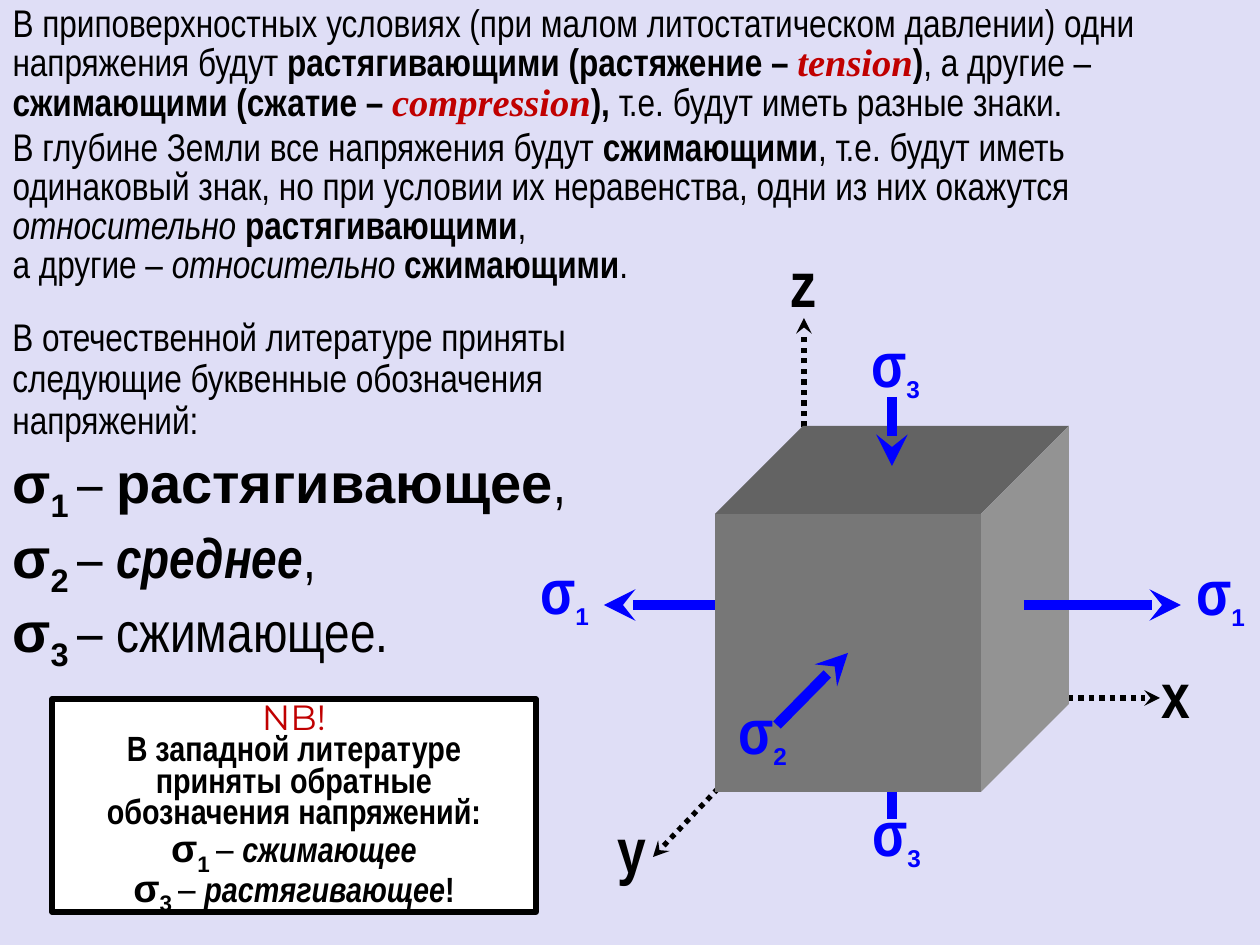
from lxml import etree
from pptx import Presentation
from pptx.dml.color import RGBColor
from pptx.enum.dml import MSO_LINE
from pptx.enum.shapes import MSO_CONNECTOR, MSO_SHAPE
from pptx.enum.text import MSO_ANCHOR, MSO_AUTO_SIZE, PP_ALIGN
from pptx.oxml.ns import qn
from pptx.util import Emu, Pt

LEFT, CENTER = PP_ALIGN.LEFT, PP_ALIGN.CENTER
DOTTED, STRAIGHT = MSO_LINE.ROUND_DOT, MSO_CONNECTOR.STRAIGHT
BLACK, WHITE = RGBColor(0, 0, 0), RGBColor(255, 255, 255)
RED, BLUE = RGBColor(0xC0, 0, 0), RGBColor(0, 0, 255)
LAVENDER = RGBColor(0xDF, 0xDE, 0xF6)
TOP_GREY, FRONT_GREY, SIDE_GREY = (RGBColor(v, v, v) for v in (0x63, 0x77, 0x93))
PX = 914400 / 126

# Run styles: font, bold, italic, colour, subscript
STYLES = {
    "plain": ("Arial Narrow", False, False, BLACK, False),
    "bold": ("Arial Narrow", True, False, BLACK, False),
    "italic": ("Arial Narrow", False, True, BLACK, False),
    "strong": ("Arial Narrow", True, True, BLACK, False),
    "term": ("Times New Roman", True, True, RED, False),
    "note": ("Montserrat", False, False, RED, False),
    "sigma": ("Arial", True, False, BLACK, False),
    "sub": ("Arial", True, False, BLACK, True),
    "axis": ("Arial Narrow", True, False, BLACK, False),
    "label": ("Arial Narrow", True, False, BLUE, False),
    "index": ("Arial", True, False, BLUE, True),
}


def stress(number, *runs):
    return [("σ", "sigma"), (f"{number} ", "sub"), ("– ", "plain"), *runs]


# Paragraphs: size, space before, runs (text, style, own size if it differs)
INTRO = [
    (22, 0, [
        ("В приповерхностных условиях (при малом литостатическом давлении) "
         "одни напряжения будут ", "plain"),
        ("растягивающими (растяжение – ", "bold"), ("tension", "term"),
        (")", "bold"), (", а другие – ", "plain"),
        ("сжимающими (сжатие – ", "bold"), ("compression", "term"),
        ("), ", "bold"), ("т.е. будут иметь разные знаки.", "plain")]),
    (22, 3.3, [
        ("В глубине Земли все напряжения будут ", "plain"),
        ("сжимающими", "bold"),
        (", т.е. будут иметь одинаковый знак, но при условии их неравенства, "
         "одни из них окажутся ", "plain"),
        ("относительно ", "italic"), ("растягивающими", "bold"), (",", "plain")]),
    (22, 0, [
        ("а другие – ", "plain"), ("относительно ", "italic"),
        ("сжимающими", "bold"), (".", "plain")]),
]
NOTATION = [
    (22, 0, [("В отечественной литературе приняты следующие буквенные "
              "обозначения напряжений:", "plain")]),
    (32, 3.2, stress(1, ("растягивающее", "sigma"), (",", "plain"))),
    (32, 3.2, stress(2, ("среднее", "strong"), (",", "plain"))),
    (32, 3.2, stress(3, ("сжимающее.", "plain"))),
]
WESTERN = [
    (20, 0, [("NB!", "note")]),
    (20, 0, [("В западной литературе приняты обратные обозначения "
              "напряжений:", "bold")]),
    (22, 0, stress(1, ("сжимающее", "strong", 20))),
    (22, 0, stress(3, ("растягивающее", "strong", 20), ("!", "bold", 20))),
]

# Arrows: start and end points
AXES = [((805, 697), (653, 857)), ((805, 698), (1160, 698)), ((804, 700), (804, 318))]
REAR_STRESSES = [((892, 819), (892, 745)), ((758, 605), (604, 605))]
FRONT_STRESSES = [((1024, 605), (1181, 605)), ((777, 725), (848, 653)),
                  ((892, 397), (892, 466))]

# Cube: front face and the shift to its rear face
CUBE_LEFT, CUBE_TOP, CUBE_RIGHT, CUBE_BOTTOM = 715, 514, 981, 792
DEPTH = 88

# Labels: left, top, width
AXIS_LABELS = [("x", 1149, 682, 54), ("z", 777, 271, 52), ("y", 605, 837, 54)]
STRESS_LABELS = [("1", 525, 577), ("1", 1181, 578), ("3", 856, 350),
                 ("3", 857, 819), ("2", 723, 717)]
LABEL_WIDTH, LABEL_HEIGHT = 79, 50


def emu(*lengths):
    return [Emu(round(v * PX)) for v in lengths]


def write(shape, paragraphs, spacing, align=LEFT, wrap=True):
    tf = shape.text_frame
    tf.word_wrap = wrap
    tf.auto_size = MSO_AUTO_SIZE.NONE
    tf.vertical_anchor = MSO_ANCHOR.TOP
    for n, (size, before, runs) in enumerate(paragraphs):
        p = tf.add_paragraph() if n else tf.paragraphs[0]
        pPr = p._p.get_or_add_pPr()
        pPr.set("marL", "0")
        pPr.set("indent", "0")
        etree.SubElement(pPr, qn("a:buNone"))
        p.alignment = align
        p.line_spacing = spacing
        p.space_before = Pt(before)
        p.space_after = Pt(0)
        for text, style, *own_size in runs:
            r = p.add_run()
            r.text = text
            font, bold, italic, color, subscript = STYLES[style]
            r.font.name, r.font.bold, r.font.italic = font, bold, italic
            r.font.size = Pt(own_size[0] if own_size else size)
            r.font.color.rgb = color
            if subscript:
                r._r.get_or_add_rPr().set("baseline", "-25000")


def add_arrow(start, end, color, width, dash=None):
    line = s.shapes.add_connector(STRAIGHT, *emu(*start, *end))
    line.line.color.rgb = color
    line.line.width = Pt(width)
    if dash:
        line.line.dash_style = dash
    etree.SubElement(line.line._get_or_add_ln(), qn("a:tailEnd"), type="stealth")
    etree.SubElement(line._element.spPr, qn("a:effectLst"))


def add_face(points, color):
    builder = s.shapes.build_freeform(*points[0], scale=PX)
    builder.add_line_segments(points[1:], close=True)
    face = builder.convert_to_shape()
    face.fill.solid()
    face.fill.fore_color.rgb = color
    face.line.fill.background()
    face.shadow.inherit = False


def add_label(x, y, width, runs):
    box = s.shapes.add_textbox(*emu(x, y, width, LABEL_HEIGHT))
    write(box, [(36, 0, runs)], 0.5, CENTER, wrap=False)


prs = Presentation()
prs.slide_width, prs.slide_height = emu(1260, 945)
s = prs.slides.add_slide(prs.slide_layouts[1])
s.background.fill.solid()
s.background.fill.fore_color.rgb = LAVENDER

# Main text
title = s.shapes.title._element
title.getparent().remove(title)
body = s.placeholders[1]
body.left, body.top, body.width, body.height = emu(0, 0, 1189, 297)
write(body, INTRO, 0.85)
write(s.shapes.add_textbox(*emu(0, 312, 612, 343)), NOTATION, 0.9)

# Axes and arrows behind the cube
for start, end in AXES:
    add_arrow(start, end, BLACK, 3, DOTTED)
for start, end in REAR_STRESSES:
    add_arrow(start, end, BLUE, 6)

# Cube
front = [(CUBE_LEFT, CUBE_TOP), (CUBE_RIGHT, CUBE_TOP),
         (CUBE_RIGHT, CUBE_BOTTOM), (CUBE_LEFT, CUBE_BOTTOM)]
rear = [(x + DEPTH, y - DEPTH) for x, y in front]
add_face([front[0], rear[0], rear[1], front[1]], TOP_GREY)
add_face([front[1], rear[1], rear[2], front[2]], SIDE_GREY)
add_face(front, FRONT_GREY)

# Arrows in front of the cube
for start, end in FRONT_STRESSES:
    add_arrow(start, end, BLUE, 6)

# Labels
for name, x, y, width in AXIS_LABELS:
    add_label(x, y, width, [(name, "axis")])
for number, x, y in STRESS_LABELS:
    add_label(x, y, LABEL_WIDTH, [("σ", "label"), (number, "index", 24)])

# Note on western notation
note = s.shapes.add_shape(MSO_SHAPE.RECTANGLE, *emu(52, 699, 484, 213))
note.shadow.inherit = False
note.fill.solid()
note.fill.fore_color.rgb = WHITE
note.line.color.rgb = BLACK
note.line.width = Pt(3)
write(note, WESTERN, 0.75, CENTER)

prs.save("out.pptx")
